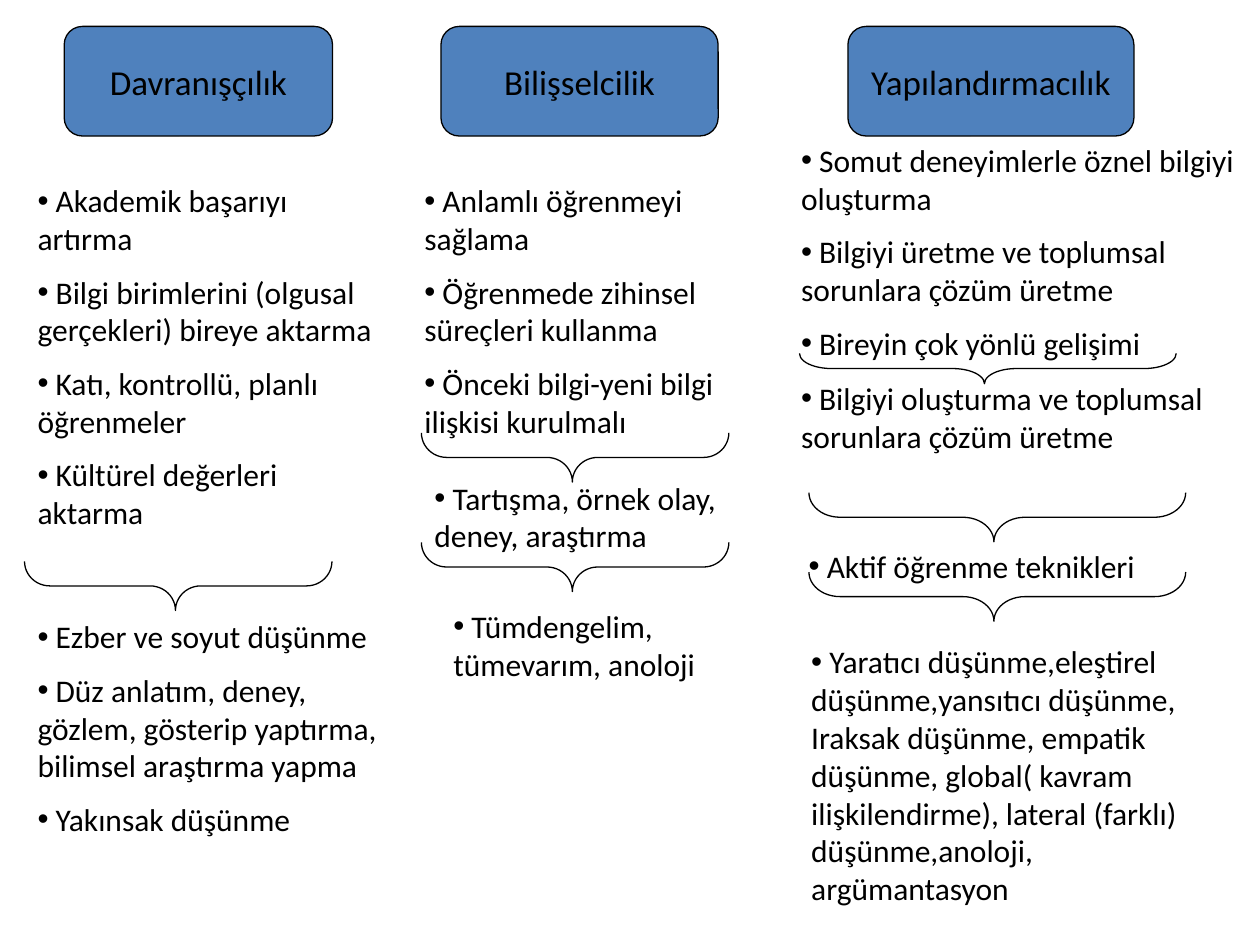
from pptx import Presentation
from pptx import util as u
from pptx.dml.color import RGBColor
from pptx.enum import shapes, text
from pptx.oxml.ns import qn
from lxml import etree

BLUE = RGBColor(0x4F, 0x81, 0xBD)
BLACK = RGBColor(0, 0, 0)
FONT = "Calibri"

deck = Presentation()
deck.slide_width, deck.slide_height = u.Inches(10), u.Inches(7.5)
page = deck.slides.add_slide(deck.slide_layouts[6])


def add_outlined(kind, left, top, width, height):
    shape = page.shapes.add_shape(
        kind, u.Inches(left), u.Inches(top), u.Inches(width), u.Inches(height))
    shape.shadow.inherit = False
    shape.line.color.rgb = BLACK
    shape.line.width = u.Pt(0.75)
    return shape


def style_font(para, size):
    para.font.name = FONT
    para.font.size = u.Pt(size)
    para.font.color.rgb = BLACK


# Column headings: left, width, title
headings = [
    (0.51, 2.13, "Davranışçılık"),
    (3.5, 2.2, "Bilişselcilik"),
    (6.73, 2.27, "Yapılandırmacılık"),
]
for left, width, title in headings:
    heading = add_outlined(shapes.MSO_SHAPE.ROUNDED_RECTANGLE, left, 0.21, width, 0.87)
    heading.fill.solid()
    heading.fill.fore_color.rgb = BLUE
    frame = heading.text_frame
    frame.margin_left = frame.margin_right = frame.margin_top = frame.margin_bottom = 0
    frame.word_wrap = False
    frame.vertical_anchor = text.MSO_ANCHOR.MIDDLE
    para = frame.paragraphs[0]
    para.text = title
    para.alignment = text.PP_ALIGN.CENTER
    style_font(para, 20)

# Braces, turned to point down: left, top, width, height, curve
braces = [
    (1.22, 3.43, 0.39, 2.44, 0.516),
    (4.37, 2.41, 0.39, 2.44, 0.516),
    (4.37, 3.28, 0.39, 2.44, 0.516),
    (7.72, 1.43, 0.24, 2.99, 1.056),
    (7.72, 2.61, 0.39, 2.99, 0.633),
    (7.72, 3.24, 0.39, 2.99, 0.633),
]
for left, top, width, height, curve in braces:
    brace = add_outlined(shapes.MSO_SHAPE.LEFT_BRACE, left, top, width, height)
    brace.fill.background()
    brace.rotation = 270
    brace.adjustments[0] = curve
    brace.adjustments[1] = 0.491

# Bulleted lists: left, top, width, height, items
lists = [
    # Behaviourism
    (0.2, 1.39, 2.91, 3.26, [
        "Akademik başarıyı artırma",
        "Bilgi birimlerini (olgusal gerçekleri) bireye aktarma",
        "Katı, kontrollü, planlı öğrenmeler",
        "Kültürel değerleri aktarma"]),
    (0.2, 4.85, 3.03, 2.52, [
        "Ezber ve soyut düşünme",
        "Düz anlatım, deney, gözlem, gösterip yaptırma, bilimsel araştırma yapma",
        "Yakınsak düşünme"]),
    # Cognitivism
    (3.27, 1.39, 2.99, 2.2, [
        "Anlamlı öğrenmeyi sağlama",
        "Öğrenmede zihinsel süreçleri kullanma",
        "Önceki bilgi-yeni bilgi ilişkisi kurulmalı"]),
    (3.35, 3.75, 2.84, 0.7, ["Tartışma, örnek olay, deney, araştırma"]),
    (3.5, 4.77, 2.44, 0.7, ["Tümdengelim, tümevarım, anoloji"]),
    # Constructivism
    (6.26, 1.07, 3.74, 1.9, [
        "Somut deneyimlerle öznel bilgiyi oluşturma",
        "Bilgiyi üretme ve toplumsal sorunlara çözüm üretme",
        "Bireyin çok yönlü gelişimi"]),
    (6.26, 2.96, 3.54, 1.01, ["Bilgiyi oluşturma ve toplumsal sorunlara çözüm üretme"]),
    (6.32, 4.29, 3.15, 0.4, ["Aktif öğrenme teknikleri"]),
    (6.34, 5.05, 3.47, 2.2, [
        "Yaratıcı düşünme,eleştirel düşünme,yansıtıcı düşünme, Iraksak düşünme, "
        "empatik düşünme, global( kavram ilişkilendirme), lateral (farklı) "
        "düşünme,anoloji, argümantasyon"]),
]
for left, top, width, height, items in lists:
    box = page.shapes.add_textbox(
        u.Inches(left), u.Inches(top), u.Inches(width), u.Inches(height))
    frame = box.text_frame
    frame.word_wrap = True
    frame.auto_size = text.MSO_AUTO_SIZE.SHAPE_TO_FIT_TEXT
    for index, item in enumerate(items):
        para = frame.add_paragraph() if index else frame.paragraphs[0]
        para.text = " " + item
        style_font(para, 18)
        if index:
            para.space_before = u.Pt(9)
        properties = para._p.get_or_add_pPr()
        bullet_font = etree.Element(qn("a:buFont"), typeface="Arial")
        bullet = etree.Element(qn("a:buChar"), char="•")
        properties.find(qn("a:defRPr")).addprevious(bullet_font)
        bullet_font.addnext(bullet)

deck.save("out.pptx")
